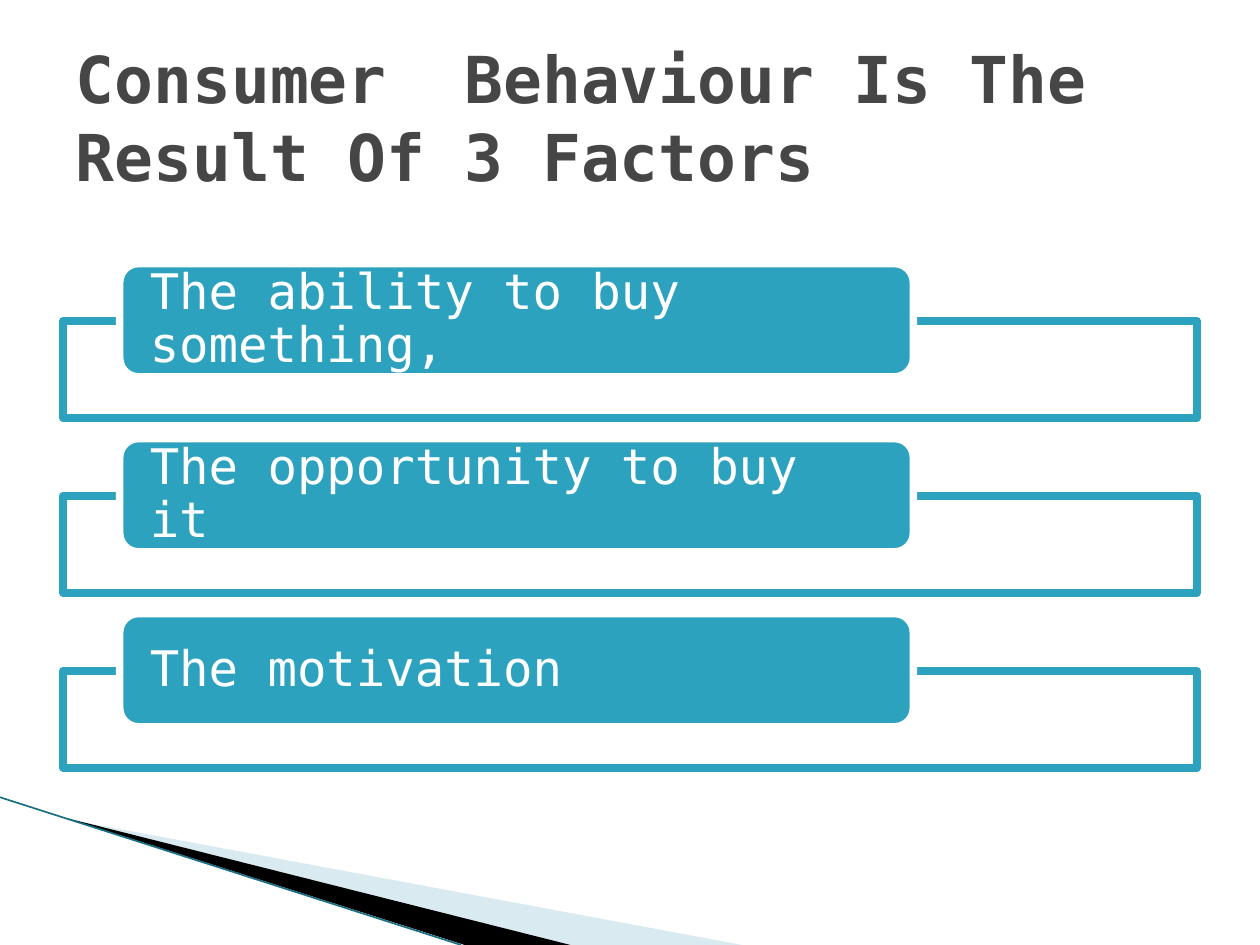
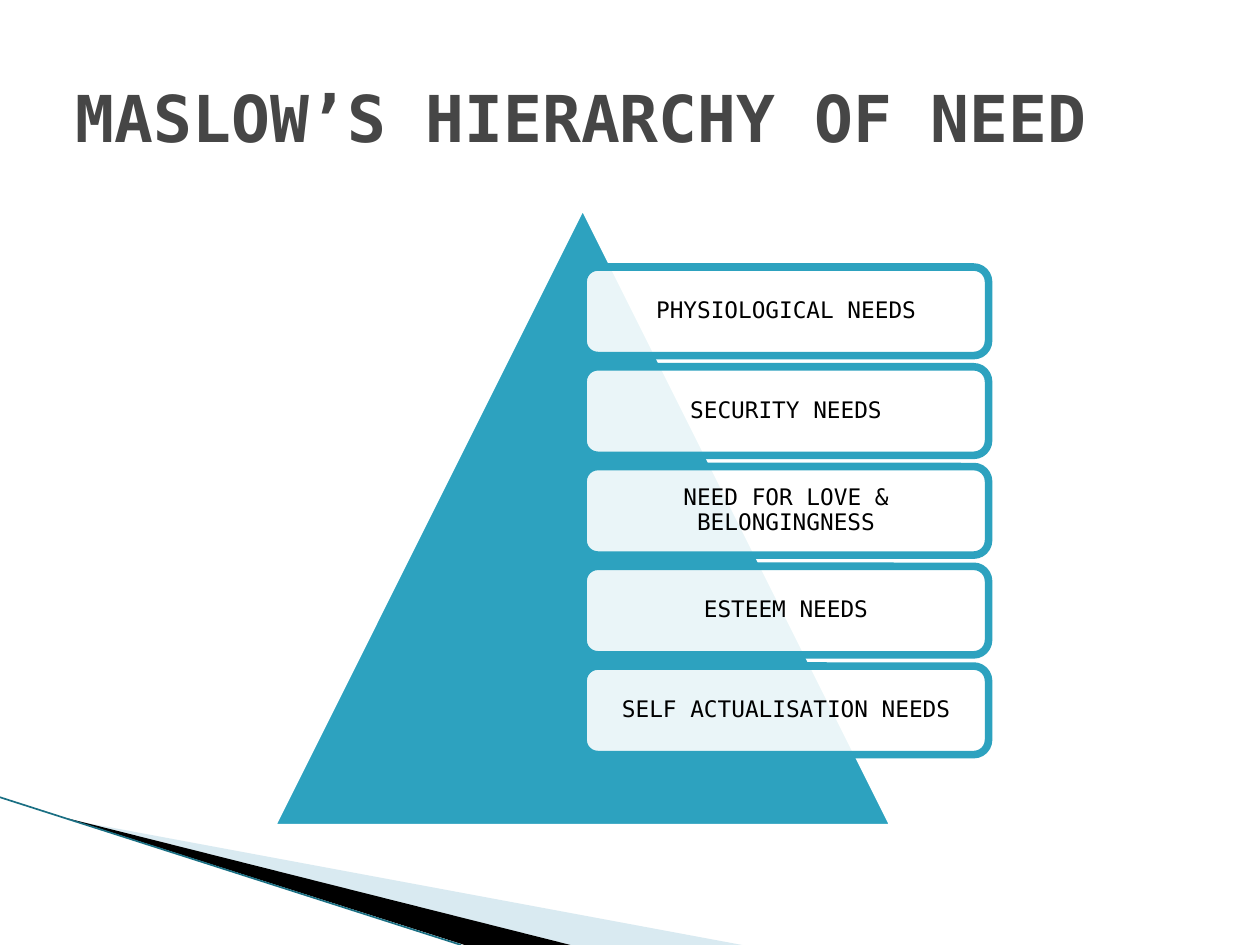
from dataclasses import dataclass

from lxml import etree
from pptx import Presentation
from pptx.dml.color import RGBColor
from pptx.enum.shapes import MSO_CONNECTOR, MSO_SHAPE
from pptx.enum.text import MSO_ANCHOR, MSO_AUTO_SIZE, PP_ALIGN
from pptx.oxml.ns import qn
from pptx.util import Pt

RECT, ROUNDED = MSO_SHAPE.RECTANGLE, MSO_SHAPE.ROUNDED_RECTANGLE
TRIANGLE, STRAIGHT = MSO_SHAPE.ISOSCELES_TRIANGLE, MSO_CONNECTOR.STRAIGHT
LEFT, CENTER, MIDDLE = PP_ALIGN.LEFT, PP_ALIGN.CENTER, MSO_ANCHOR.MIDDLE

FONT = "DejaVu Sans Mono"
TEAL, DARK_TEAL, PALE_BLUE = "2DA2BF", "1A6F83", "A0CBDC"
WHITE, BLACK, GREY = "FFFFFF", "000000", "464646"
OUTLINE = 4.33

FACTORS = ["The ability to buy something,", "The opportunity to buy it", "The motivation"]
NEEDS = ["PHYSIOLOGICAL NEEDS", "SECURITY NEEDS", "NEED FOR LOVE & BELONGINGNESS",
         "ESTEEM NEEDS", "SELF ACTUALISATION NEEDS"]


@dataclass(frozen=True)
class Box:
    """Place and look of a shape, in points, with the step to the next one below."""
    kind: int
    left: float
    top: float
    width: float
    height: float
    fill: str
    line: str
    opacity: int = 100
    step: float = 0


@dataclass(frozen=True)
class Label:
    """Text style of a box."""
    size: float
    color: str
    align: int
    inset: float


@dataclass(frozen=True)
class Band:
    """Filled corner band given by its outline points."""
    points: tuple
    fill: str
    opacity: int = 100


BANDS = [
    Band(((40, 468.5), (424, 540), (326, 540)), PALE_BLUE, 40),
    Band(((38, 467.5), (326, 540), (265.5, 540)), BLACK),
]
FRAME = Box(RECT, 36, 183.4, 648, 55.4, WHITE, TEAL, 90, 100)
TAB = Box(ROUNDED, 68.4, 150.6, 453.6, 64.8, TEAL, WHITE, step=100)
TAB_LABEL = Label(28, WHITE, LEFT, 14.1)
PYRAMID = Box(TRIANGLE, 154.8, 116.6, 356.4, 356.4, TEAL, WHITE)
CARD = Box(ROUNDED, 333.2, 152.6, 231.7, 50.6, WHITE, TEAL, 90, 57)
CARD_LABEL = Label(13, BLACK, CENTER, 1.1)


def rgb(value: str) -> RGBColor:
    """Turn a hex string into a colour."""
    return RGBColor.from_string(value)


def paint(sp, color: str, opacity: int) -> None:
    """Give a shape a solid fill of some opacity and no shadow."""
    sp.shadow.inherit = False
    sp.fill.solid()
    sp.fill.fore_color.rgb = rgb(color)
    if opacity < 100:
        clr = sp._element.spPr.find(qn("a:solidFill"))[0]
        etree.SubElement(clr, qn("a:alpha"), val=str(opacity * 1000))


def add_run(p, text: str, size: float, color: str, bold: bool = False) -> None:
    """Append a formatted run to a paragraph."""
    r = p.add_run()
    r.text = text
    r.font.name, r.font.size, r.font.bold = FONT, Pt(size), bold
    r.font.color.rgb = rgb(color)


def add_box(s, box: Box, row: int = 0):
    """Draw a box in the given row of its stack."""
    sp = s.shapes.add_shape(box.kind, Pt(box.left), Pt(box.top + row * box.step),
                            Pt(box.width), Pt(box.height))
    paint(sp, box.fill, box.opacity)
    sp.line.color.rgb = rgb(box.line)
    sp.line.width = Pt(OUTLINE)
    return sp


def add_label(sp, text: str, label: Label) -> None:
    """Write a label inside a shape."""
    tf = sp.text_frame
    tf.word_wrap = True
    tf.vertical_anchor = MIDDLE
    tf.margin_left = tf.margin_right = Pt(label.inset)
    tf.margin_top = tf.margin_bottom = 0
    p = tf.paragraphs[0]
    p.alignment = label.align
    p.line_spacing = 0.9
    add_run(p, text, label.size, label.color)


def add_corner(s) -> None:
    """Draw the bands and the thin line in the lower left corner."""
    for band in BANDS:
        start, *rest = [(Pt(x), Pt(y)) for x, y in band.points]
        builder = s.shapes.build_freeform(*start)
        builder.add_line_segments(rest)
        sp = builder.convert_to_shape()
        paint(sp, band.fill, band.opacity)
        sp.line.fill.background()
    edge = s.shapes.add_connector(STRAIGHT, 0, Pt(455.6), Pt(263.5), Pt(540))
    edge.line.color.rgb = rgb(DARK_TEAL)
    edge.line.width = Pt(0.95)
    etree.SubElement(edge._element.spPr, qn("a:effectLst"))


def add_slide(prs, title: str):
    """Add a slide with its title and corner bands."""
    s = prs.slides.add_slide(prs.slide_layouts[5])
    sp = s.shapes.title
    sp.left, sp.top, sp.width, sp.height = Pt(36), Pt(21.6), Pt(648), Pt(90)
    tf = sp.text_frame
    tf.word_wrap = True
    tf.auto_size = MSO_AUTO_SIZE.NONE
    tf.vertical_anchor = MIDDLE
    p = tf.paragraphs[0]
    p.alignment = LEFT
    add_run(p, title, 36.9, GREY, True)
    add_corner(s)
    return s


def add_factors(prs) -> None:
    """Build the slide with the three factors."""
    s = add_slide(prs, "Consumer  Behaviour Is The Result Of 3 Factors")
    for row, factor in enumerate(FACTORS):
        add_box(s, FRAME, row)
        add_label(add_box(s, TAB, row), factor, TAB_LABEL)


def add_hierarchy(prs) -> None:
    """Build the slide with the pyramid of needs."""
    s = add_slide(prs, "MASLOW’S HIERARCHY OF NEED")
    add_box(s, PYRAMID)
    for row, need in enumerate(NEEDS):
        add_label(add_box(s, CARD, row), need, CARD_LABEL)


def main() -> None:
    """Build and save the presentation."""
    prs = Presentation()
    prs.slide_width, prs.slide_height = Pt(720), Pt(540)
    add_factors(prs)
    add_hierarchy(prs)
    prs.save("out.pptx")


if __name__ == "__main__":
    main()
